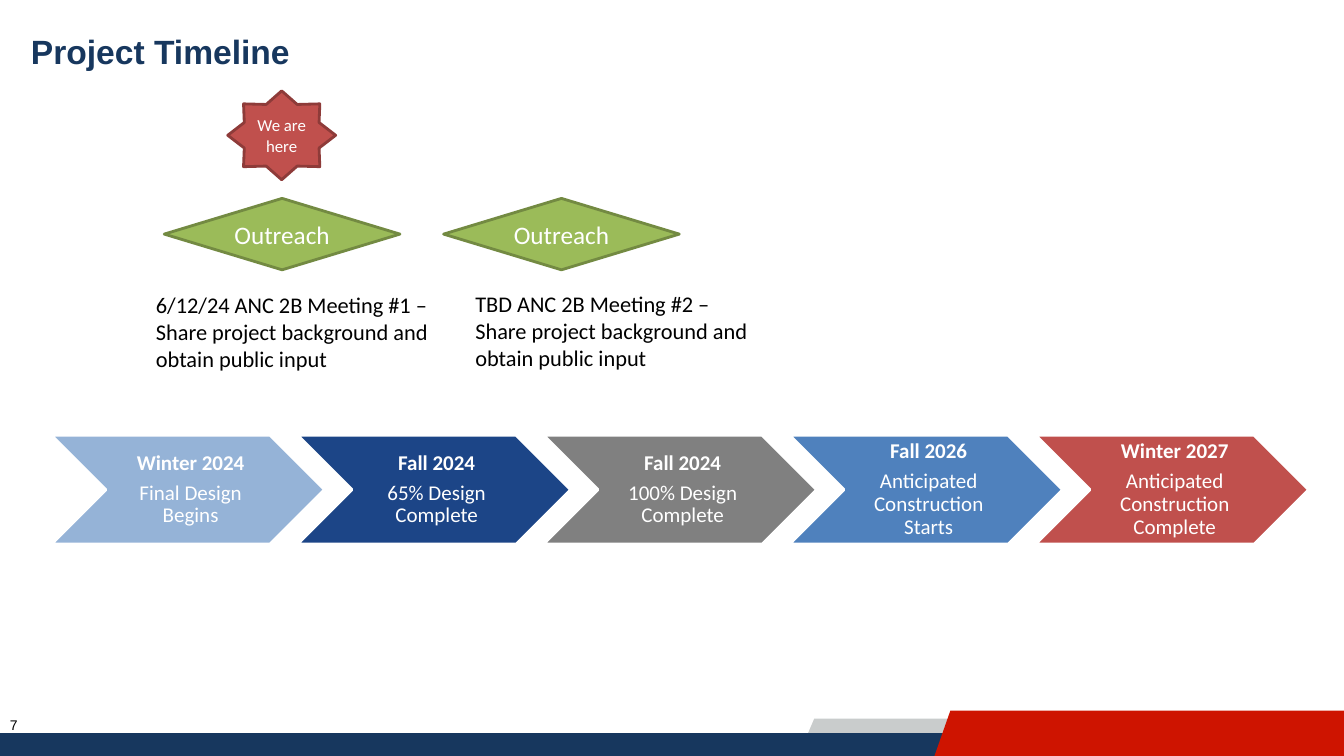
from dataclasses import dataclass

from pptx import Presentation
from pptx.dml.color import RGBColor
from pptx.enum.shapes import MSO_SHAPE
from pptx.enum.text import MSO_ANCHOR, PP_ALIGN
from pptx.util import Cm, Pt

TITLE = "Project Timeline"
PAGE_NUMBER = "7"
MARKER = "We are here"
OUTREACH = "Outreach"
OUTREACH_PURPOSE = "Share project background and obtain public input"
# Meeting heading, diamond left, note left, note top (cm)
MEETINGS = [
    ("6/12/24 ANC 2B Meeting #1 –", 4.14, 3.68, 7.21),
    ("TBD ANC 2B Meeting #2 –", 11.18, 11.73, 7.19),
]
PHASES = [
    ("Winter 2024", "Final Design Begins", "95B3D7"),
    ("Fall 2024", "65% Design Complete", "1C4587"),
    ("Fall 2024", "100% Design Complete", "808080"),
    ("Fall 2026", "Anticipated Construction Starts", "4F81BD"),
    ("Winter 2027", "Anticipated Construction Complete", "C0504D"),
]
# Footer bands: corner points (cm) and colour, from back to front
FOOTER_BANDS = [
    ([(30, 18.11), (20.52, 18.11), (20.12, 19.05), (30, 19.05)], "C9CCCC"),
    ([(33.76, 18.47), (0, 18.47), (0, 19.05), (33.76, 19.05)], "17375E"),
    ([(33.87, 17.91), (23.95, 17.91), (23.55, 19.05), (33.87, 19.05)], "CE1400"),
]


@dataclass(frozen=True)
class Theme:
    heading_font: str = "Arial"
    body_font: str = "Calibri"
    navy: str = "17375E"
    black: str = "000000"
    white: str = "FFFFFF"
    red: str = "C0504D"
    red_edge: str = "8E3B39"
    green: str = "9BBB59"
    green_edge: str = "738A42"
    title_size: float = 24
    outreach_size: float = 18
    note_size: float = 16
    phase_size: float = 15
    marker_size: float = 12
    number_size: float = 10
    line_width: float = 2


THEME = Theme()
PHASE_LEFT, PHASE_TOP, PHASE_PITCH = 1.3, 10.97, 6.2
PHASE_WIDTH, PHASE_HEIGHT = 6.88, 2.74
DIAMOND_TOP, DIAMOND_WIDTH, DIAMOND_HEIGHT = 5, 5.94, 1.8


def write(frame, lines, size, color, font=THEME.body_font, align=PP_ALIGN.LEFT,
          anchor=MSO_ANCHOR.MIDDLE, wrap=True):
    """Fill a text frame with one paragraph per (text, bold) line."""
    frame.word_wrap = wrap
    frame.vertical_anchor = anchor
    for index, (text, bold) in enumerate(lines):
        paragraph = frame.add_paragraph() if index else frame.paragraphs[0]
        paragraph.alignment = align
        run = paragraph.add_run()
        run.text = text
        run.font.name = font
        run.font.size = Pt(size)
        run.font.bold = bold
        run.font.color.rgb = RGBColor.from_string(color)


def add_text(slide, box, lines, size, color, **options):
    text_box = slide.shapes.add_textbox(*map(Cm, box))
    write(text_box.text_frame, lines, size, color, **options)


def paint(shape, fill, edge=None):
    shape.shadow.inherit = False
    shape.fill.solid()
    shape.fill.fore_color.rgb = RGBColor.from_string(fill)
    if edge:
        shape.line.color.rgb = RGBColor.from_string(edge)
        shape.line.width = Pt(THEME.line_width)
    else:
        shape.line.fill.background()


def add_label_shape(slide, kind, box, fill, edge, lines, size):
    shape = slide.shapes.add_shape(kind, *map(Cm, box))
    paint(shape, fill, edge)
    write(shape.text_frame, lines, size, THEME.white, align=PP_ALIGN.CENTER)
    return shape


def add_footer(slide):
    for points, color in FOOTER_BANDS:
        corners = [(Cm(x), Cm(y)) for x, y in points]
        builder = slide.shapes.build_freeform(*corners[0])
        builder.add_line_segments(corners[1:], close=True)
        paint(builder.convert_to_shape(), color)
    add_text(slide, (0, 17.93, 0.94, 0.69), [(PAGE_NUMBER, False)],
             THEME.number_size, THEME.black, font=THEME.heading_font,
             anchor=MSO_ANCHOR.TOP, wrap=False)


def add_meetings(slide):
    for heading, diamond_left, note_left, note_top in MEETINGS:
        add_label_shape(slide, MSO_SHAPE.DIAMOND,
                        (diamond_left, DIAMOND_TOP, DIAMOND_WIDTH, DIAMOND_HEIGHT),
                        THEME.green, THEME.green_edge, [(OUTREACH, False)],
                        THEME.outreach_size)
        add_text(slide, (note_left, note_top, 7.62, 2.31),
                 [(heading, False), (OUTREACH_PURPOSE, False)],
                 THEME.note_size, THEME.black, anchor=MSO_ANCHOR.TOP)


def add_phases(slide):
    for index, (date, milestone, color) in enumerate(PHASES):
        left = PHASE_LEFT + index * PHASE_PITCH
        chevron = add_label_shape(slide, MSO_SHAPE.CHEVRON,
                                  (left, PHASE_TOP, PHASE_WIDTH, PHASE_HEIGHT),
                                  color, THEME.white,
                                  [(date, True), (milestone, False)], THEME.phase_size)
        frame = chevron.text_frame
        frame.margin_left = Cm(0.18)
        frame.margin_top = frame.margin_right = frame.margin_bottom = Cm(0.05)
        for paragraph in frame.paragraphs:
            paragraph.line_spacing = 0.9
            paragraph.space_after = Pt(0.35 * THEME.phase_size)


def main():
    presentation = Presentation()
    presentation.slide_width = Cm(33.87)
    presentation.slide_height = Cm(19.05)
    slide = presentation.slides.add_slide(presentation.slide_layouts[6])
    add_footer(slide)
    add_text(slide, (0.53, 0.43, 14.88, 1.73), [(TITLE, True)],
             THEME.title_size, THEME.navy, font=THEME.heading_font)
    add_label_shape(slide, MSO_SHAPE.STAR_8_POINT, (5.74, 2.29, 2.72, 2.24),
                    THEME.red, THEME.red_edge, [(MARKER, False)], THEME.marker_size)
    add_meetings(slide)
    add_phases(slide)
    presentation.save("out.pptx")


if __name__ == "__main__":
    main()
